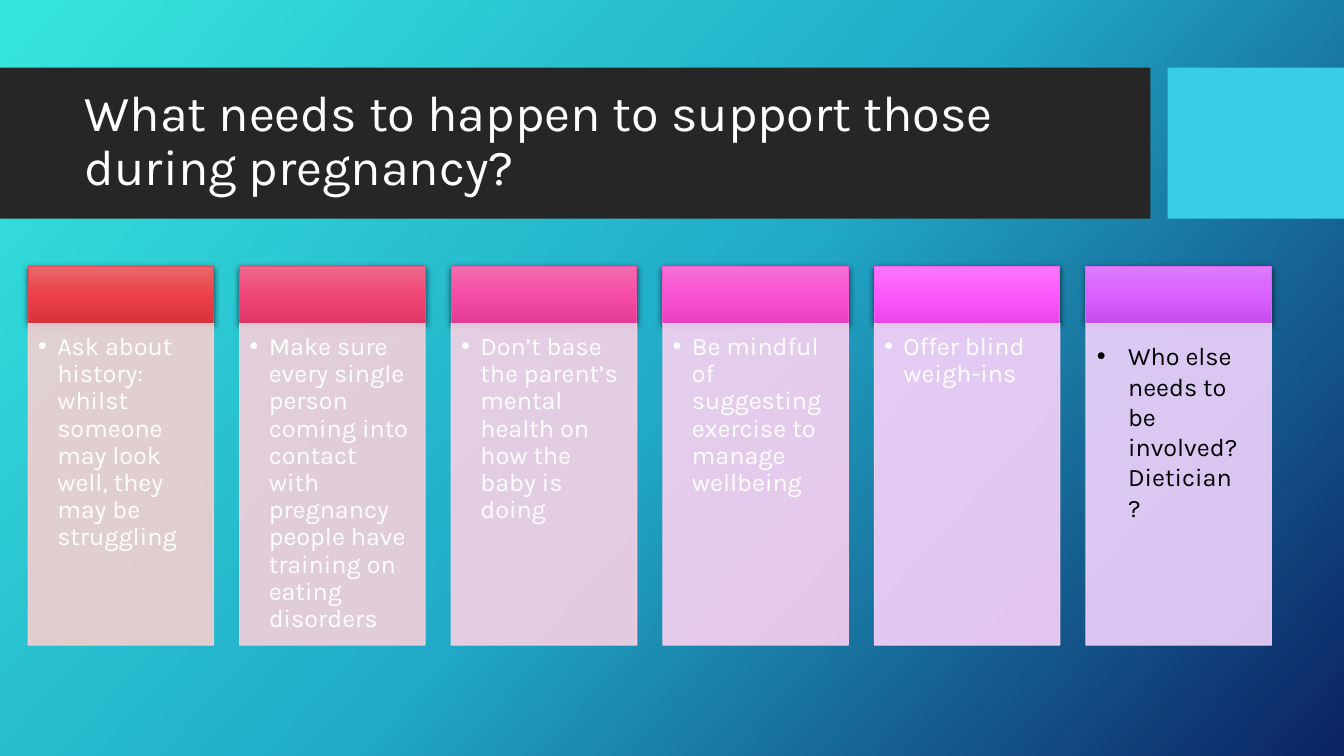
from copy import deepcopy

from lxml import etree
from pptx import Presentation
from pptx.dml.color import RGBColor
from pptx.enum.shapes import MSO_SHAPE
from pptx.enum.text import MSO_ANCHOR, MSO_AUTO_SIZE
from pptx.oxml.ns import qn
from pptx.util import Inches, Pt

RECTANGLE = MSO_SHAPE.RECTANGLE
TOP = MSO_ANCHOR.TOP
MIDDLE = MSO_ANCHOR.MIDDLE
GROW = MSO_AUTO_SIZE.SHAPE_TO_FIT_TEXT

COLUMN_LEFT = 0.28
COLUMN_PITCH = (10.77 - COLUMN_LEFT) / 5
COLUMN_WIDTH = 1.84
HEADER_TOP, HEADER_HEIGHT = 2.64, 0.57
PANEL_TOP, PANEL_HEIGHT = HEADER_TOP + HEADER_HEIGHT, 3.19

COLUMNS = [
    (("E9676C", "EC414A", "DA313A"), "E44951", "F5D0D0",
     "Ask about history: whilst someone may look well, they may be struggling"),
    (("ED6A8C", "F14678", "DF3667"), "E94E7B", "F6D0DB",
     "Make sure every single person coming into contact with pregnancy people "
     "have training on eating disorders"),
    (("F16EAF", "F54CA5", "E33B93"), "ED54A5", "F8D1E6",
     "Don’t base the parent’s mental health on how the baby is doing"),
    (("F572D4", "F952D2", "E640BF"), "F259CE", "FAD1F2",
     "Be mindful of suggesting exercise to manage wellbeing"),
    (("F877F8", "FD58FD", "E945EA"), "F55FF6", "F9D2FB",
     "Offer blind weigh-ins"),
    (("DC7DFC", "D960FF", "C64CEC"), "D666F9", "F0D3FD", None),
]


def color(value):
    return RGBColor.from_string(value)


def add_element(parent, tag, **attributes):
    return etree.SubElement(parent, qn(tag), attributes)


class SlideBuilder:
    font = "Karla"

    def __init__(self, page):
        self.page = page

    def gradient(self, fill, owner, colors, angle):
        fill.gradient()
        fill.gradient_angle = 360 - angle
        stops = owner.find(".//" + qn("a:gsLst"))
        stops.append(deepcopy(stops[-1]))
        for index, stop in enumerate(fill.gradient_stops):
            stop.color.rgb = color(colors[index])
            stop.position = index / 2

    def background(self, colors, angle):
        self.gradient(self.page.background.fill, self.page.element, colors, angle)

    def rectangle(self, left, top, width, height, fill=None, line=None):
        box = self.page.shapes.add_shape(
            RECTANGLE, Inches(left), Inches(top), Inches(width), Inches(height))
        box.shadow.inherit = False
        if fill:
            box.fill.solid()
            box.fill.fore_color.rgb = color(fill)
        if line:
            box.line.color.rgb = color(line)
            box.line.width = Pt(0.75)
        else:
            box.line.fill.background()
        return box

    def header(self, left, colors, line):
        box = self.rectangle(left, HEADER_TOP, COLUMN_WIDTH, HEADER_HEIGHT, line=line)
        properties = box.element.spPr
        self.gradient(box.fill, properties, colors, 90)
        shadow = add_element(
            properties.find(qn("a:effectLst")), "a:outerShdw", blurRad=str(Pt(4.5)),
            dist=str(Pt(1.5)), dir="5400000", algn="ctr", rotWithShape="0")
        shade = add_element(shadow, "a:srgbClr", val="000000")
        add_element(shade, "a:alpha", val="63000")

    def panel(self, left, fill):
        box = self.rectangle(left, PANEL_TOP, COLUMN_WIDTH, PANEL_HEIGHT, fill, fill)
        for shade in box.element.spPr.iter(qn("a:srgbClr")):
            add_element(shade, "a:alpha", val="90000")
        return box

    def text_box(self, left, top, width, height):
        return self.page.shapes.add_textbox(
            Inches(left), Inches(top), Inches(width), Inches(height))

    def put_text(self, box, text, size=18, shade="FFFFFF", anchor=TOP,
                 spacing=None, indent=None, insets=(0.1, 0.05, 0.1, 0.05)):
        frame = box.text_frame
        frame.word_wrap = True
        frame.vertical_anchor = anchor
        (frame.margin_left, frame.margin_top,
         frame.margin_right, frame.margin_bottom) = map(Inches, insets)
        para = frame.paragraphs[0]
        para.text = text
        para.line_spacing = spacing
        properties = para._p.get_or_add_pPr()
        properties.set("algn", "l")
        if indent:
            properties.set("marL", str(Inches(indent)))
            properties.set("indent", str(-Inches(indent)))
            add_element(properties, "a:buFont", typeface="Arial")
            add_element(properties, "a:buChar", char="•")
        span = para.runs[0].font
        span.name = self.font
        span.size = Pt(size)
        span.color.rgb = color(shade)


def main():
    deck = Presentation()
    deck.slide_width, deck.slide_height = Inches(13.33), Inches(7.5)
    builder = SlideBuilder(deck.slides.add_slide(deck.slide_layouts[6]))

    builder.background(("36E6DD", "21ABC8", "0C2263"), 42)
    builder.rectangle(0, 0.67, 11.41, 1.5, "262626")
    builder.rectangle(11.58, 0.67, 1.75, 1.5, "39CDE7")
    title = builder.text_box(0.74, 0.82, 10.51, 1.18)
    builder.put_text(title, "What needs to happen to support those during pregnancy?",
                     size=36, anchor=MIDDLE, spacing=0.9)

    for index, (colors, line, fill, text) in enumerate(COLUMNS):
        left = COLUMN_LEFT + index * COLUMN_PITCH
        builder.header(left, colors, line)
        panel = builder.panel(left, fill)
        if text:
            builder.put_text(panel, text, spacing=0.9, indent=0.19,
                             insets=(0.1, 0.1, 0.14, 0.16))

    question = builder.text_box(10.78, 3.33, 1.61, 1.62)
    builder.put_text(question, "Who else needs to be involved? Dietician?",
                     shade="000000", indent=0.31)
    question.text_frame.auto_size = GROW

    deck.save("out.pptx")


if __name__ == "__main__":
    main()
